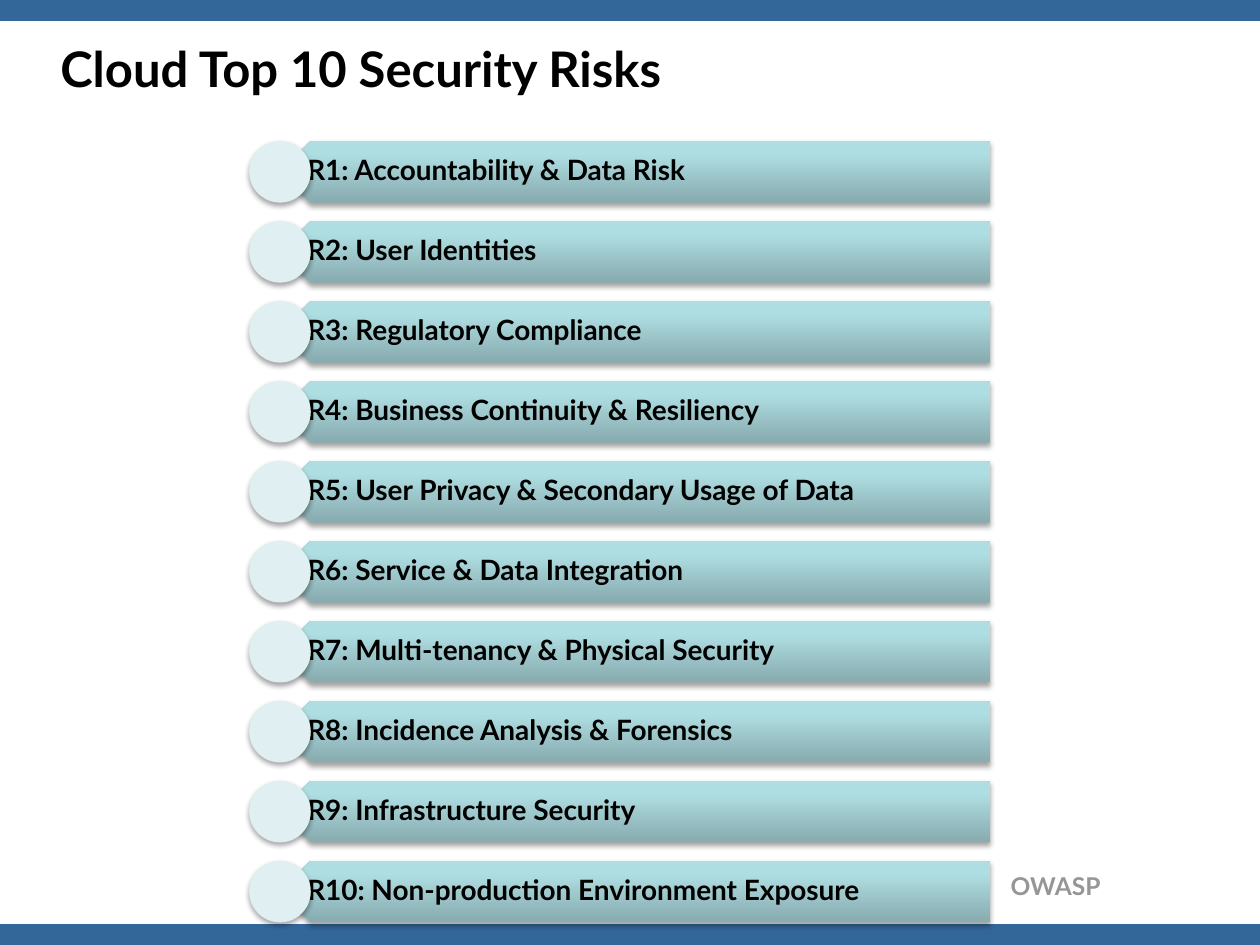
from typing import NamedTuple

from lxml import etree
from pptx import Presentation
from pptx import util as u
from pptx.dml.color import RGBColor
from pptx.enum import shapes, text
from pptx.oxml import ns

COLORS = {
    "band": "336699",
    "title": "000000",
    "footer": "969696",
    "bar_dark": "87ABAE",
    "bar_mid": "AFDEE2",
    "bar_light": "AFE0E4",
    "disc": "E0F0F2",
    "shadow": "000000",
}
FONT = "Lato"
SLIDE_WIDTH, SLIDE_HEIGHT = 720, 540
BAND_HEIGHT = 12
BAR_LEFT, BAR_WIDTH = 160, 406
ROW_TOP, ROW_HEIGHT, ROW_PITCH = 80.6, 35.2, 45.7


class Box(NamedTuple):
    left: float
    top: float
    width: float
    height: float

    def lengths(self) -> list[u.Length]:
        return [u.Pt(side) for side in self]


RISKS = [
    "Accountability & Data Risk",
    "User Identities",
    "Regulatory Compliance",
    "Business Continuity & Resiliency",
    "User Privacy & Secondary Usage of Data",
    "Service & Data Integration",
    "Multi-tenancy & Physical Security",
    "Incidence Analysis & Forensics",
    "Infrastructure Security",
    "Non-production Environment Exposure",
]


def add_text(slide, box: Box, words: str, *, size: float, color: str = "title",
             align=text.PP_ALIGN.LEFT, anchor=text.MSO_ANCHOR.MIDDLE,
             insets=(7.2, 3.6, 7.2, 3.6), line_spacing: float = 1.0,
             space_after: float = 0) -> None:
    frame = slide.shapes.add_textbox(*box.lengths()).text_frame
    frame.word_wrap = True
    frame.vertical_anchor = anchor
    (frame.margin_left, frame.margin_top,
     frame.margin_right, frame.margin_bottom) = [u.Pt(inset) for inset in insets]
    line = frame.paragraphs[0]
    line.alignment = align
    line.line_spacing = line_spacing
    line.space_after = u.Pt(space_after)
    run = line.add_run()
    run.text = words
    run.font.name = FONT
    run.font.size = u.Pt(size)
    run.font.bold = True
    run.font.color.rgb = RGBColor.from_string(COLORS[color])


def add_solid(slide, kind, box: Box, color: str):
    solid = slide.shapes.add_shape(kind, *box.lengths())
    solid.shadow.inherit = False
    solid.line.fill.background()
    solid.fill.solid()
    solid.fill.fore_color.rgb = RGBColor.from_string(COLORS[color])
    return solid


def add_shadow(solid) -> None:
    effects = solid.element.spPr.find(ns.qn("a:effectLst"))
    shadow = etree.SubElement(
        effects, ns.qn("a:outerShdw"), blurRad=str(u.Pt(3.1)),
        dist=str(u.Pt(1.8)), dir="5400000", rotWithShape="0")
    tint = etree.SubElement(shadow, ns.qn("a:srgbClr"), val=COLORS["shadow"])
    etree.SubElement(tint, ns.qn("a:alpha"), val="35000")


def add_gradient(solid) -> None:
    """Shade from dark at the bottom to light at the top, whatever the rotation."""
    properties = solid.element.spPr
    gradient = etree.Element(ns.qn("a:gradFill"), rotWithShape="0")
    stops = etree.SubElement(gradient, ns.qn("a:gsLst"))
    for percent, color in ((0, "bar_dark"), (80, "bar_mid"), (100, "bar_light")):
        stop = etree.SubElement(stops, ns.qn("a:gs"), pos=str(percent * 1000))
        etree.SubElement(stop, ns.qn("a:srgbClr"), val=COLORS[color])
    etree.SubElement(gradient, ns.qn("a:lin"), ang="16200000", scaled="0")
    properties.replace(properties.find(ns.qn("a:solidFill")), gradient)


def add_risk(slide, index: int, risk: str) -> None:
    top = ROW_TOP + index * ROW_PITCH
    bar_box = Box(BAR_LEFT, top, BAR_WIDTH, ROW_HEIGHT)
    # Bar pointing left
    bar = add_solid(slide, shapes.MSO_SHAPE.PENTAGON, bar_box, "bar_mid")
    bar.rotation = 180
    add_gradient(bar)
    add_shadow(bar)
    add_text(slide, bar_box, f"R{index + 1}: {risk}", size=16,
             insets=(15.6, 4.8, 8.6, 4.8), line_spacing=0.9, space_after=5.6)
    # Disc centred on the tip of the bar
    disc_box = Box(BAR_LEFT - ROW_HEIGHT / 2, top, ROW_HEIGHT, ROW_HEIGHT)
    add_shadow(add_solid(slide, shapes.MSO_SHAPE.OVAL, disc_box, "disc"))


def main() -> None:
    deck = Presentation()
    deck.slide_width, deck.slide_height = u.Pt(SLIDE_WIDTH), u.Pt(SLIDE_HEIGHT)
    slide = deck.slides.add_slide(deck.slide_layouts[6])

    # Top and bottom bands
    for top in (0, SLIDE_HEIGHT - BAND_HEIGHT):
        add_solid(slide, shapes.MSO_SHAPE.RECTANGLE,
                  Box(0, top, SLIDE_WIDTH, BAND_HEIGHT), "band")

    # Footer and title
    add_text(slide, Box(448, 494, 188, 24), "OWASP", size=14, color="footer",
             align=text.PP_ALIGN.RIGHT, anchor=text.MSO_ANCHOR.TOP)
    add_text(slide, Box(27.4, 6, 614, 66), "Cloud Top 10 Security Risks", size=28)

    # Risk list
    for index, risk in enumerate(RISKS):
        add_risk(slide, index, risk)

    deck.save("out.pptx")


if __name__ == "__main__":
    main()
